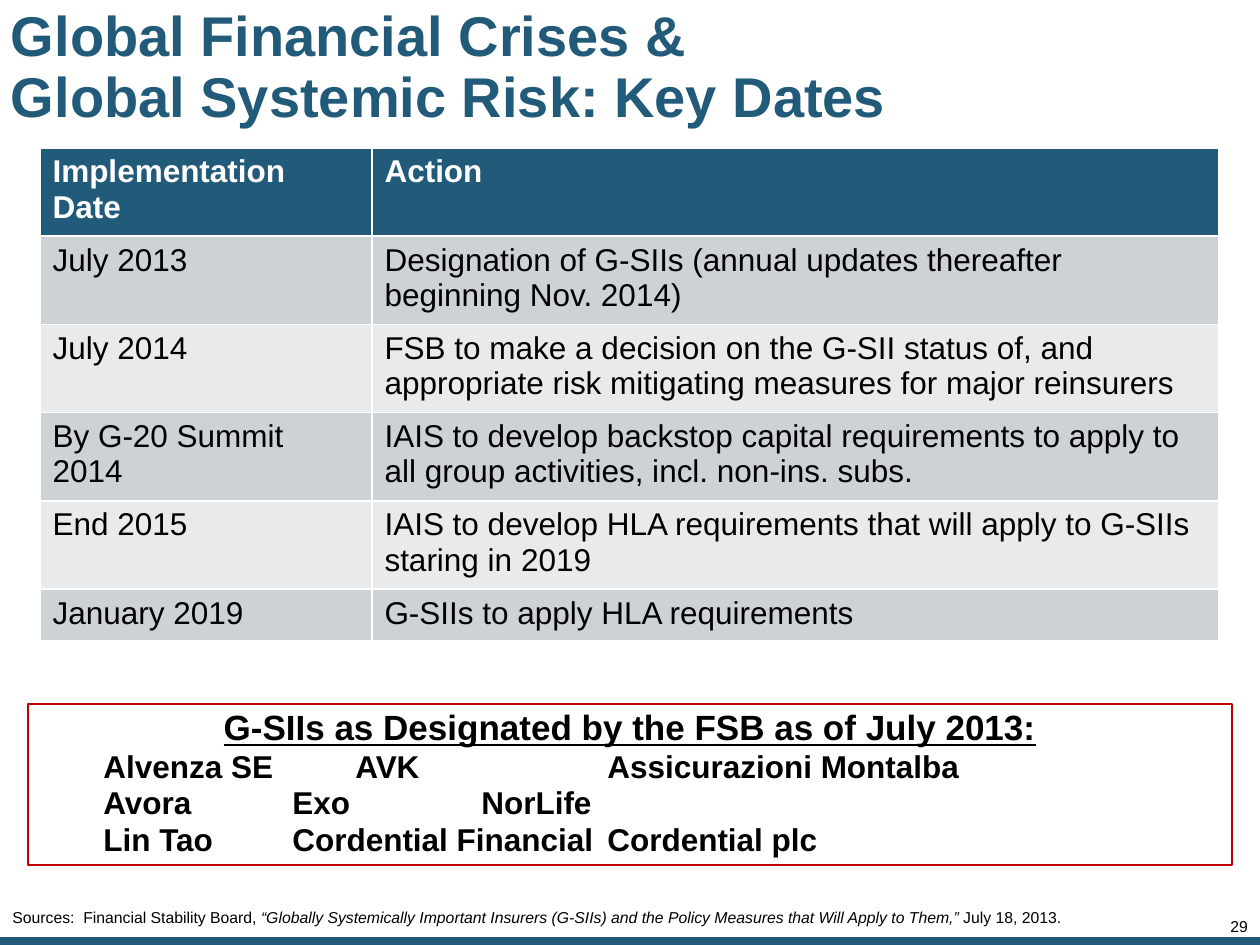
from pptx import Presentation
from pptx.dml.color import RGBColor
from pptx.enum.shapes import MSO_SHAPE
from pptx.enum.text import MSO_ANCHOR, PP_ALIGN
from pptx.util import Pt

PX = 914400 / 126
THEME = {
    "font": "Arial",
    "blue": "225A7A", "black": "000000", "white": "FFFFFF", "red": "C00000",
    "bands": ("CDD2D7", "E8EAEC"),
    "title": 32, "heading": 20, "body": 18, "small": 9,
}


def px(*values):
    return [round(v * PX) for v in values]


def add_text(p, text, size="body", color="black", bold=False, italic=False,
             underline=False, align=None, spacing=None):
    """Append formatted text to a paragraph; a newline makes a line break."""
    if align is not None:
        p.alignment = align
    if spacing is not None:
        p.line_spacing = spacing
    for i, line in enumerate(text.split("\n")):
        if i:
            p.add_line_break()
        r = p.add_run()
        r.text = line
        f = r.font
        f.name, f.size = THEME["font"], Pt(THEME[size])
        f.bold, f.italic, f.underline = bold, italic, underline
        f.color.rgb = RGBColor.from_string(THEME[color])


prs = Presentation()
prs.slide_width, prs.slide_height = px(1260, 945)
s = prs.slides.add_slide(prs.slide_layouts[6])

# Footer bar and page number
bar = s.shapes.add_shape(MSO_SHAPE.RECTANGLE, *px(0, 937, 1260, 8))
bar.shadow.inherit = False
bar.fill.solid()
bar.fill.fore_color.rgb = RGBColor.from_string(THEME["blue"])
bar.line.fill.background()

tf = s.shapes.add_textbox(*px(1186, 917, 62, 16)).text_frame
tf.word_wrap = True
tf.margin_left = tf.margin_top = tf.margin_right = tf.margin_bottom = 0
add_text(tf.paragraphs[0], "29", size="small", align=PP_ALIGN.RIGHT)

# Title
tf = s.shapes.add_textbox(*px(5, 10, 1149, 118)).text_frame
tf.word_wrap = True
tf.vertical_anchor = MSO_ANCHOR.MIDDLE
tf.margin_left, tf.margin_top, tf.margin_right, tf.margin_bottom = px(6, 6, 6, 6)
add_text(tf.paragraphs[0], "Global Financial Crises &\nGlobal Systemic Risk: Key Dates",
         size="title", color="blue", bold=True, spacing=0.9)

# Table of key dates
rows = [
    ("Implementation Date", "Action"),
    ("July 2013", "Designation of G-SIIs (annual updates thereafter beginning Nov. 2014)"),
    ("July 2014", "FSB to make a decision on the G-SII status of, and appropriate "
                  "risk mitigating measures for major reinsurers"),
    ("By G-20 Summit 2014", "IAIS to develop backstop capital requirements to apply to "
                            "all group activities, incl. non-ins. subs."),
    ("End 2015", "IAIS to develop HLA requirements that will apply to G-SIIs staring in 2019"),
    ("January 2019", "G-SIIs to apply HLA requirements"),
]
table = s.shapes.add_table(len(rows), 2, *px(40, 148, 1179, 467)).table
table.columns[0].width, table.columns[1].width = px(332, 847)
for i, row in enumerate(rows):
    header = i == 0
    table.rows[i].height = px(52 if i == len(rows) - 1 else 83)[0]
    fill = THEME["blue"] if header else THEME["bands"][(i - 1) % 2]
    for j, text in enumerate(row):
        cell = table.cell(i, j)
        cell.fill.solid()
        cell.fill.fore_color.rgb = RGBColor.from_string(fill)
        add_text(cell.text_frame.paragraphs[0], text, bold=header,
                 color="white" if header else "black")

# Box of designated insurers
box = s.shapes.add_shape(MSO_SHAPE.RECTANGLE, *px(28, 704, 1204, 161))
box.shadow.inherit = False
box.fill.background()
box.line.color.rgb = RGBColor.from_string(THEME["red"])
box.line.width = Pt(0.75)
tf = box.text_frame
tf.word_wrap = True
add_text(tf.paragraphs[0], "G-SIIs as Designated by the FSB as of July 2013:",
         size="heading", bold=True, underline=True, align=PP_ALIGN.CENTER, spacing=Pt(21))
for line in ("Alvenza SE\t\tAVK\t\t\tAssicurazioni Montalba",
             "Avora\t\tExo\t\t\tNorLife",
             "Lin Tao\t\tCordential Financial\tCordential plc"):
    p = tf.add_paragraph()
    p.level = 1
    pPr = p._p.get_or_add_pPr()
    pPr.set("marL", str(px(63)[0]))
    pPr.set("indent", "0")
    add_text(p, line, bold=True, align=PP_ALIGN.LEFT, spacing=Pt(21))

# Sources
tf = s.shapes.add_textbox(*px(0, 902, 1206, 32)).text_frame
tf.word_wrap = True
p = tf.paragraphs[0]
add_text(p, "Sources:  Financial Stability Board, ", size="small")
add_text(p, "“Globally Systemically Important Insurers (G-SIIs) and the Policy Measures "
            "that Will Apply to Them,”", size="small", italic=True)
add_text(p, " July 18, 2013.", size="small")

prs.save("out.pptx")
